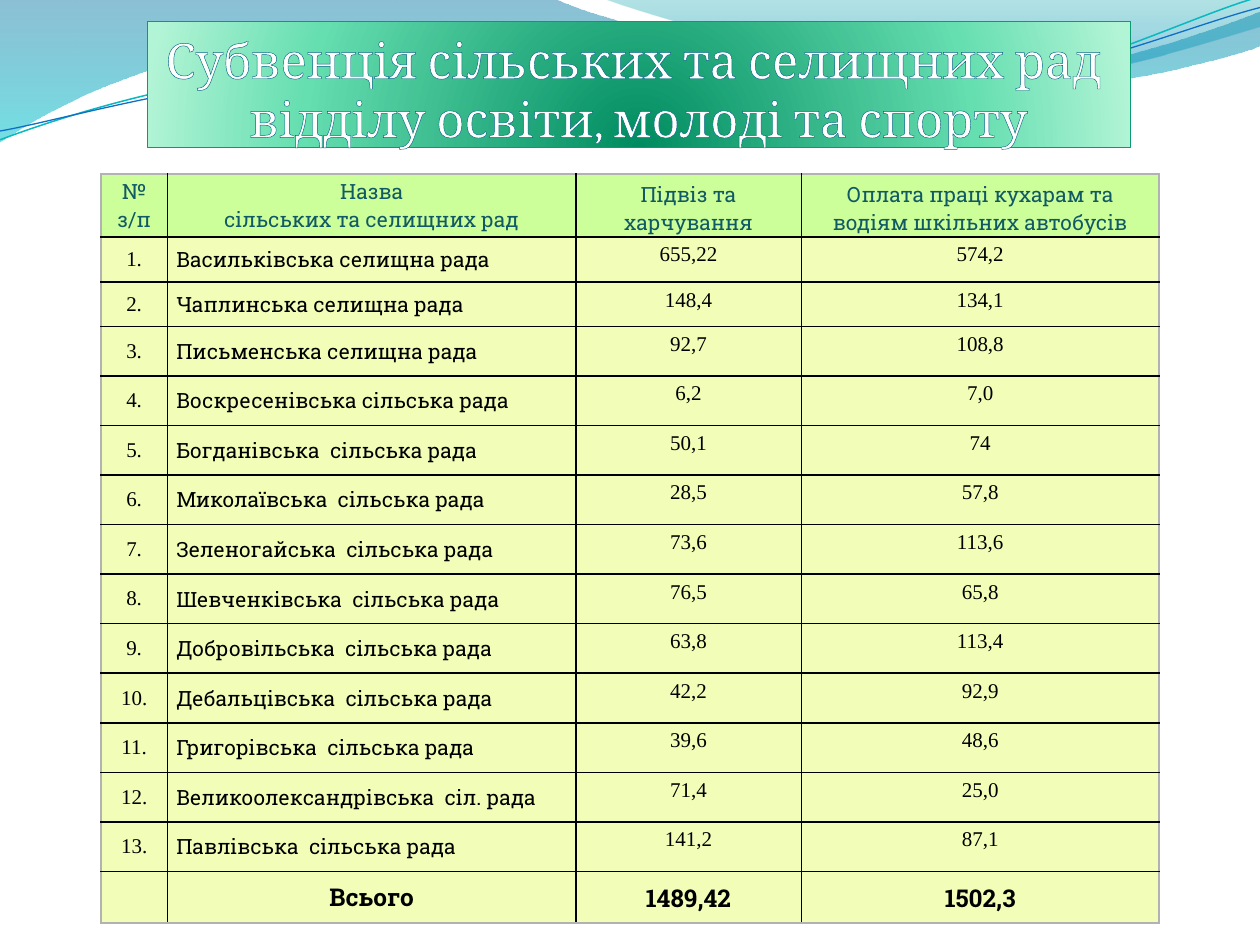
"""Builds the slide on subventions from village and settlement councils."""
from lxml import etree
from pptx import Presentation
from pptx.dml.color import RGBColor
from pptx.enum.text import MSO_ANCHOR, MSO_AUTO_SIZE, PP_ALIGN
from pptx.oxml import parse_xml
from pptx.oxml.ns import qn
from pptx.util import Inches, Pt

CENTER, LEFT = PP_ALIGN.CENTER, PP_ALIGN.LEFT
TOP, MIDDLE, BOTTOM = MSO_ANCHOR.TOP, MSO_ANCHOR.MIDDLE, MSO_ANCHOR.BOTTOM
FIT_SHAPE = MSO_AUTO_SIZE.SHAPE_TO_FIT_TEXT
NS = 'xmlns:a="http://schemas.openxmlformats.org/drawingml/2006/main"'

WHITE = RGBColor(0xFF, 0xFF, 0xFF)
BLACK = RGBColor(0, 0, 0)
GREY = RGBColor(0xB2, 0xB2, 0xB2)
TEAL = RGBColor(0x11, 0x59, 0x64)
TITLE_LINE = RGBColor(0x0A, 0x9B, 0x74)
TITLE_OUTLINE = RGBColor(0x00, 0x63, 0x7F)
HEADER_OUTLINE = RGBColor(0x00, 0x70, 0xD5)
HEADER_FILL = RGBColor(0xCC, 0xFF, 0x99)
BODY_FILL = RGBColor(0xF2, 0xFE, 0xB8)
CYAN = RGBColor(0x0A, 0xB8, 0xBF)
BLUE = RGBColor(0x0F, 0x6F, 0xC6)
SLAB, SERIF, TITLE_FONT = "Roboto Slab", "Times New Roman", "Cambria"

TITLE = ["Субвенція сільських та селищних рад ", "відділу освіти, молоді та спорту"]
HEADERS = [
    ["№", "з/п"],
    ["Назва", "сільських та селищних рад"],
    ["Підвіз та харчування"],
    ["Оплата праці кухарам та водіям шкільних автобусів"],
]
COUNCILS = [
    ("Васильківська селищна рада", "655,22", "574,2"),
    ("Чаплинська селищна рада", "148,4", "134,1"),
    ("Письменська селищна рада", "92,7", "108,8"),
    ("Воскресенівська сільська рада", "6,2", "7,0"),
    ("Богданівська  сільська рада", "50,1", "74"),
    ("Миколаївська  сільська рада", "28,5", "57,8"),
    ("Зеленогайська  сільська рада", "73,6", "113,6"),
    ("Шевченківська  сільська рада", "76,5", "65,8"),
    ("Добровільська  сільська рада", "63,8", "113,4"),
    ("Дебальцівська  сільська рада", "42,2", "92,9"),
    ("Григорівська  сільська рада", "39,6", "48,6"),
    ("Великоолександрівська  сіл. рада", "71,4", "25,0"),
    ("Павлівська  сільська рада", "141,2", "87,1"),
]
TOTALS = ["Всього", "1489,42", "1502,3"]
TABLE_WIDTH, TABLE_HEIGHT = 8.4, 5.95
COLUMN_WIDTHS = [0.53, 3.24, 1.79, 2.84]
FIRST_ROWS, LAST_ROW, EVEN_ROWS = [0.5, 0.36, 0.35], 0.41, 11
EVEN_HEIGHT = (TABLE_HEIGHT - sum(FIRST_ROWS) - LAST_ROW) / EVEN_ROWS
ROW_HEIGHTS = FIRST_ROWS + [EVEN_HEIGHT] * EVEN_ROWS + [LAST_ROW]
NARROW, NORMAL, TIGHT = (0.07, 0, 0.07, 0), (0.1, 0.05, 0.1, 0.05), (0.01, 0.01, 0.01, 0)
HEADER_MARGINS = (0.1, 0.05, 0.1, 0)

LINEAR = '<a:lin ang="5400000" scaled="1"/>'
RADIAL = ('<a:path path="circle"><a:fillToRect l="50000" t="130000" '
          'r="50000" b="-30000"/></a:path>')
BANDS = [
    ([(0, 0), (4.4, -0.01), (4.76, 0.17, 6.64, 0.63, 7.58, 0.63),
      (8.53, 0.63, 9.58, 0.26, 10, 0.09), (10.01, 0.36),
      (9.83, 0.44, 8.7, 0.76, 7.46, 0.75), (6.22, 0.75, 3.82, 0.28, 2.57, 0.34),
      (1.29, 0.36, 0.46, 0.83, -0.01, 1.13), (0, 0)],
     [(0, "0074A1", 45), (100, "00C6CF", 55)]),
    ([(4.79, -0.01), (5.09, 0.11, 6.82, 0.62, 7.69, 0.65),
      (8.56, 0.69, 9.61, 0.32, 10, 0.21), (10, 0), (4.79, -0.01)],
     [(0, "00A1A9", 30), (80, "008BBF", 45)]),
]
STRANDS = [
    ([(0, 1.11), (0.48, 0.93, 1.58, 0.57, 2.77, 0.52),
      (3.95, 0.47, 5.93, 0.89, 7.13, 0.8), (8.33, 0.71, 9.38, 0.15, 9.98, -0.02)],
     CYAN, 0.85),
    ([(0, 1.04), (0.47, 0.96, 1.64, 0.61, 2.83, 0.56),
      (4.03, 0.51, 5.97, 0.84, 7.17, 0.75), (8.36, 0.67, 9.41, 0.21, 10, 0.06)],
     BLUE, 0.75),
]


def add_wave(slide, segments, closed):
    points = [(Inches(x), Inches(y)) for segment in segments
              for x, y in zip(segment[::2], segment[1::2])]
    builder = slide.shapes.build_freeform(*points[0])
    builder.add_line_segments(points[1:], close=closed)
    wave = builder.convert_to_shape()
    lines = wave._element.findall(".//" + qn("a:lnTo"))
    for segment in segments[1:]:
        parts, lines = lines[:len(segment) // 2], lines[len(segment) // 2:]
        if len(parts) == 3:
            curve = etree.Element(qn("a:cubicBezTo"))
            parts[0].addprevious(curve)
            for part in parts:
                curve.append(part[0])
                part.getparent().remove(part)
    wave.shadow.inherit = False
    wave.fill.background()
    slide.shapes.title._element.addprevious(wave._element)
    return wave


def color_xml(color, alpha):
    opacity = f'<a:alpha val="{alpha * 1000}"/>' if alpha < 100 else ""
    return f'<a:srgbClr val="{color}">{opacity}</a:srgbClr>'


def fill_gradient(shape, stops, direction):
    shape.fill.background()
    stop_xml = "".join(f'<a:gs pos="{position * 1000}">{color_xml(color, alpha)}</a:gs>'
                       for position, color, alpha in stops)
    properties = shape._element.spPr
    properties.replace(properties.find(qn("a:noFill")), parse_xml(
        f'<a:gradFill {NS} rotWithShape="1"><a:gsLst>{stop_xml}</a:gsLst>{direction}</a:gradFill>'))


def add_run(paragraph, text, font_name, size, color, bold=False, outline=None):
    run = paragraph.add_run()
    run.text = text
    font = run.font
    font.name, font.size, font.bold = font_name, Pt(size), bold
    font.color.rgb = color
    if outline:
        line_color, width, alpha = outline
        run._r.get_or_add_rPr().insert(0, parse_xml(
            f'<a:ln {NS} w="{Pt(width)}"><a:solidFill>{color_xml(line_color, alpha)}'
            '</a:solidFill></a:ln>'))


def set_margins(frame, margins):
    (frame.margin_left, frame.margin_top,
     frame.margin_right, frame.margin_bottom) = map(Inches, margins)


def set_borders(cell, edges):
    properties = cell._tc.get_or_add_tcPr()
    for position, (edge, color) in enumerate(edges):
        properties.insert(position, parse_xml(
            f'<a:{edge} {NS} w="{Pt(1)}"><a:solidFill>{color_xml(color, 100)}'
            f'</a:solidFill></a:{edge}>'))


def write_cell(cell, lines, margins, anchor, align, fill, **style):
    set_margins(cell, margins)
    cell.vertical_anchor = anchor
    cell.fill.solid()
    cell.fill.fore_color.rgb = fill
    for index, line in enumerate(lines):
        frame = cell.text_frame
        paragraph = frame.add_paragraph() if index else frame.paragraphs[0]
        paragraph.alignment = align
        add_run(paragraph, line, **style)


def add_title(slide):
    title = slide.shapes.title
    title.left, title.top, title.width, title.height = map(Inches, (1.17, 0.17, 7.8, 1))
    fill_gradient(title, [(0, "008C60", 100), (68, "65DEB0", 100), (100, "B2F4D6", 100)], RADIAL)
    title.line.color.rgb, title.line.width = TITLE_LINE, Pt(0.75)
    frame = title.text_frame
    frame.auto_size, frame.vertical_anchor = FIT_SHAPE, BOTTOM
    set_margins(frame, (0, 0.05, 0, 0))
    paragraph = frame.paragraphs[0]
    paragraph.alignment = CENTER
    for index, line in enumerate(TITLE):
        if index:
            paragraph.add_line_break()
        add_run(paragraph, line, TITLE_FONT, 28, WHITE, outline=(TITLE_OUTLINE, 1, 100))


def add_council_table(slide):
    rows, columns = len(ROW_HEIGHTS), len(COLUMN_WIDTHS)
    table = slide.shapes.add_table(rows, columns, Inches(0.8), Inches(1.38),
                                   Inches(TABLE_WIDTH), Inches(TABLE_HEIGHT)).table
    table.horz_banding = False
    for column, width in zip(table.columns, COLUMN_WIDTHS):
        column.width = Inches(width)
    for row, height in zip(table.rows, ROW_HEIGHTS):
        row.height = Inches(height)

    for index, lines in enumerate(HEADERS):
        write_cell(table.cell(0, index), lines, NARROW if index < 2 else HEADER_MARGINS, MIDDLE,
                   CENTER, HEADER_FILL, font_name=SLAB, size=12, color=TEAL,
                   outline=(HEADER_OUTLINE, 0.07, 55))
    layouts = [(NARROW, MIDDLE, CENTER, SERIF), (NARROW, MIDDLE, LEFT, SLAB),
               (NORMAL, TOP, CENTER, SERIF), (NORMAL, TOP, CENTER, SERIF)]
    for number, council in enumerate(COUNCILS, 1):
        for index, (text, layout) in enumerate(zip((f"{number}.", *council), layouts)):
            margins, anchor, align, font_name = layout
            write_cell(table.cell(number, index), [text], margins, anchor, align, BODY_FILL,
                       font_name=font_name, size=12, color=BLACK)
    write_cell(table.cell(rows - 1, 0), [], NORMAL, TOP, LEFT, BODY_FILL)
    for index, text in enumerate(TOTALS, 1):
        write_cell(table.cell(rows - 1, index), [text], NARROW if index == 1 else TIGHT, MIDDLE,
                   CENTER, BODY_FILL, font_name=SLAB, size=14, color=BLACK, bold=True)

    for row in range(rows):
        for column in range(columns):
            set_borders(table.cell(row, column), [
                ("lnL", BLACK if column else GREY),
                ("lnR", BLACK if column < columns - 1 else GREY),
                ("lnT", BLACK if row else GREY),
                ("lnB", BLACK if row < rows - 1 else GREY)])


def main():
    deck = Presentation()
    deck.slide_width, deck.slide_height = Inches(10), Inches(7.5)
    slide = deck.slides.add_slide(deck.slide_layouts[5])
    slide.background.fill.solid()
    slide.background.fill.fore_color.rgb = WHITE
    for segments, stops in BANDS:
        band = add_wave(slide, segments, True)
        band.line.fill.background()
        fill_gradient(band, stops, LINEAR)
    for segments, color, width in STRANDS:
        strand = add_wave(slide, segments, False)
        strand.line.color.rgb, strand.line.width = color, Pt(width)
    add_title(slide)
    add_council_table(slide)
    deck.save("out.pptx")


if __name__ == "__main__":
    main()
